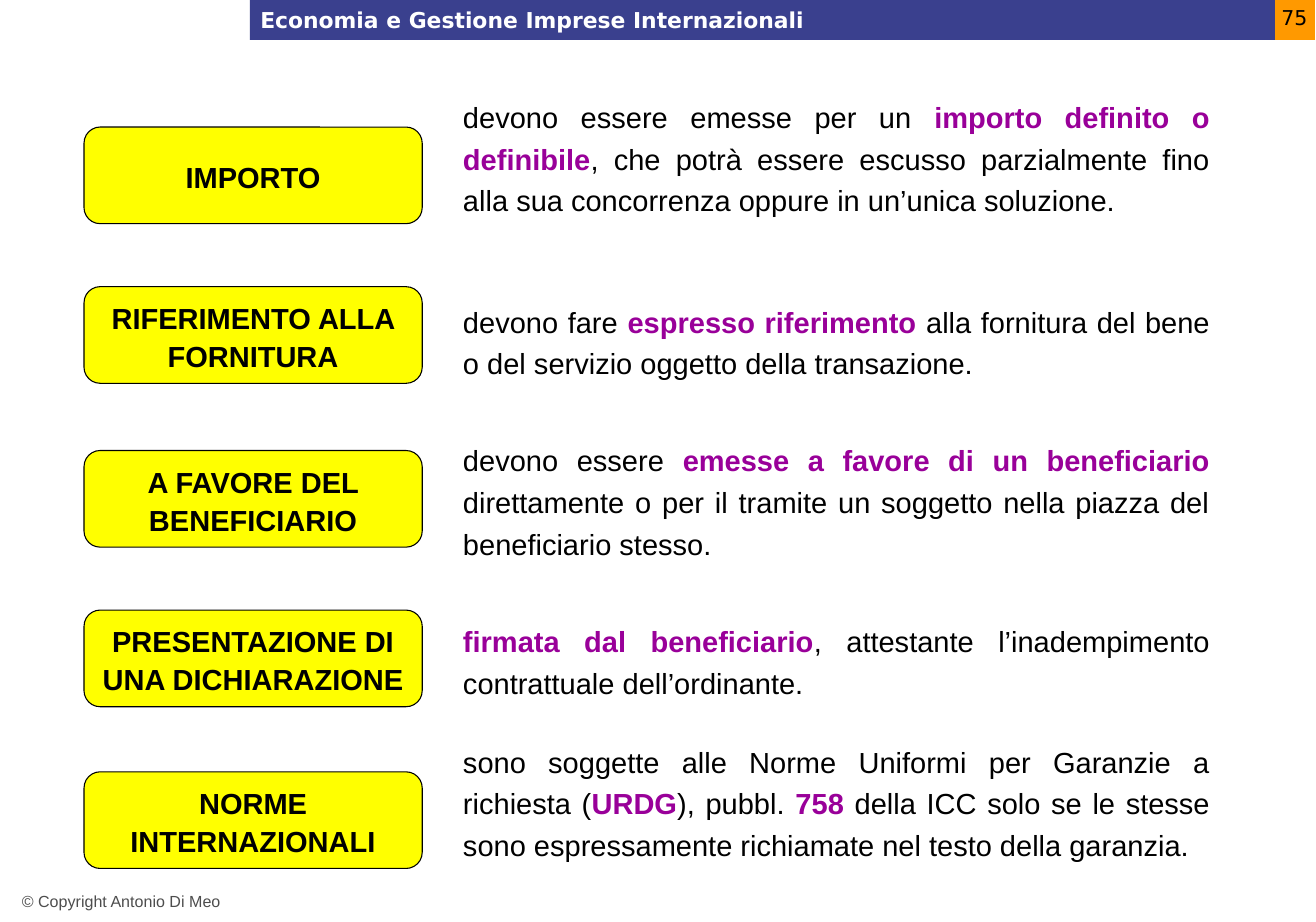
"""Build the slide on the requirements of international guarantees."""
from pptx import Presentation
from pptx.dml.color import RGBColor
from pptx.enum import shapes, text
from pptx.util import Inches, Pt

HEADER = "Economia e Gestione Imprese Internazionali"
PAGE = "75"
COPYRIGHT = "© Copyright Antonio Di Meo"

# label, label top, text top, text height, text with *highlights*
ROWS = [
    ("IMPORTO", 1.21, 0.83, 1.27,
     "devono essere emesse per un *importo definito o definibile*, che potrà essere "
     "escusso parzialmente fino alla sua concorrenza oppure in un’unica soluzione."),
    ("RIFERIMENTO ALLA FORNITURA", 2.73, 2.78, 0.87,
     "devono fare *espresso riferimento* alla fornitura del bene o del servizio "
     "oggetto della transazione."),
    ("A FAVORE DEL BENEFICIARIO", 4.29, 4.1, 1.27,
     "devono essere *emesse a favore di un beneficiario* direttamente o per il tramite "
     "un soggetto nella piazza del beneficiario stesso."),
    ("PRESENTAZIONE DI UNA DICHIARAZIONE", 5.81, 5.82, 0.87,
     "*firmata dal beneficiario*, attestante l’inadempimento contrattuale dell’ordinante."),
    ("NORME INTERNAZIONALI", 7.35, 6.97, 1.27,
     "sono soggette alle Norme Uniformi per Garanzie a richiesta (*URDG*), pubbl. *758* "
     "della ICC solo se le stesse sono espressamente richiamate nel testo della garanzia."),
]

BLACK, WHITE, YELLOW, PURPLE = "000000", "FFFFFF", "FFFF00", "990099"
BLUE, ORANGE, GREY = "3A408E", "FF9900", "4D4D4D"
SIZE = 19.9
MIDDLE, TOP = text.MSO_ANCHOR.MIDDLE, text.MSO_ANCHOR.TOP
LEFT, CENTER, JUSTIFY = text.PP_ALIGN.LEFT, text.PP_ALIGN.CENTER, text.PP_ALIGN.JUSTIFY
RECT, ROUNDED = shapes.MSO_SHAPE.RECTANGLE, shapes.MSO_SHAPE.ROUNDED_RECTANGLE


def rgb(color):
    return RGBColor.from_string(color)


def write(sp, content, size, font="Arial", color=BLACK, bold=False,
          align=LEFT, anchor=TOP, spacing=1.0):
    tf = sp.text_frame
    tf.word_wrap = True
    tf.vertical_anchor = anchor
    p = tf.paragraphs[0]
    p.alignment = align
    p.line_spacing = spacing
    p.space_before = Pt(0)
    for i, part in enumerate(content.split("*")):
        if part:
            marked = i % 2 == 1
            r = p.add_run()
            r.text = part
            r.font.name = font
            r.font.size = Pt(size)
            r.font.bold = bold or marked
            r.font.color.rgb = rgb(PURPLE if marked else color)
    return tf


def add_box(s, kind, box, fill, line=None):
    sp = s.shapes.add_shape(kind, *map(Inches, box))
    sp.shadow.inherit = False
    sp.fill.solid()
    sp.fill.fore_color.rgb = rgb(fill)
    if line:
        sp.line.color.rgb = rgb(line)
        sp.line.width = Pt(0.75)
    else:
        sp.line.fill.background()
    return sp


def add_text(s, box, content, size, **style):
    return write(s.shapes.add_textbox(*map(Inches, box)), content, size, **style)


def main():
    prs = Presentation()
    prs.slide_width, prs.slide_height = Inches(12.53), Inches(8.78)
    s = prs.slides.add_slide(prs.slide_layouts[6])

    for label, label_top, text_top, height, body in ROWS:
        sp = add_box(s, ROUNDED, (0.8, label_top, 3.22, 0.92), YELLOW, BLACK)
        write(sp, label, SIZE, bold=True, align=CENTER, anchor=MIDDLE, spacing=1.1)
        add_text(s, (4.31, text_top, 7.31, height), body, SIZE, align=JUSTIFY, spacing=1.2)

    add_text(s, (0.11, 8.44, 2.73, 0.29), COPYRIGHT, 11, color=GREY)

    sp = add_box(s, RECT, (12.13, -0.01, 0.39, 0.39), ORANGE)
    tf = write(sp, PAGE, 14, font="DejaVu Sans", align=CENTER)
    tf.margin_left = tf.margin_right = tf.margin_bottom = Inches(0.04)
    tf.margin_top = Inches(0.06)

    sp = add_box(s, RECT, (2.38, -0.01, 9.76, 0.39), BLUE)
    write(sp, HEADER, 15, font="DejaVu Sans", color=WHITE, bold=True, anchor=MIDDLE)

    prs.save("out.pptx")


if __name__ == "__main__":
    main()
